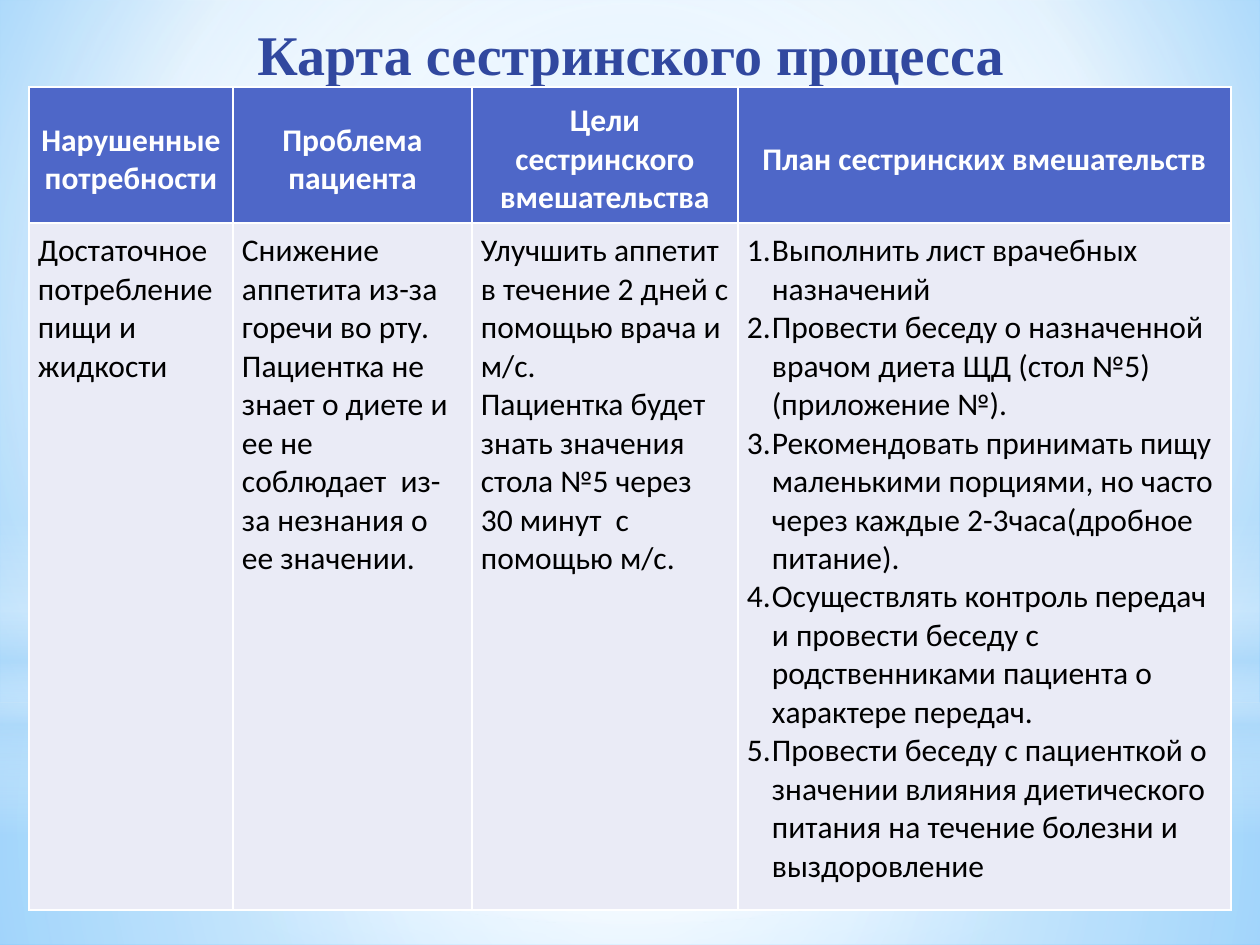
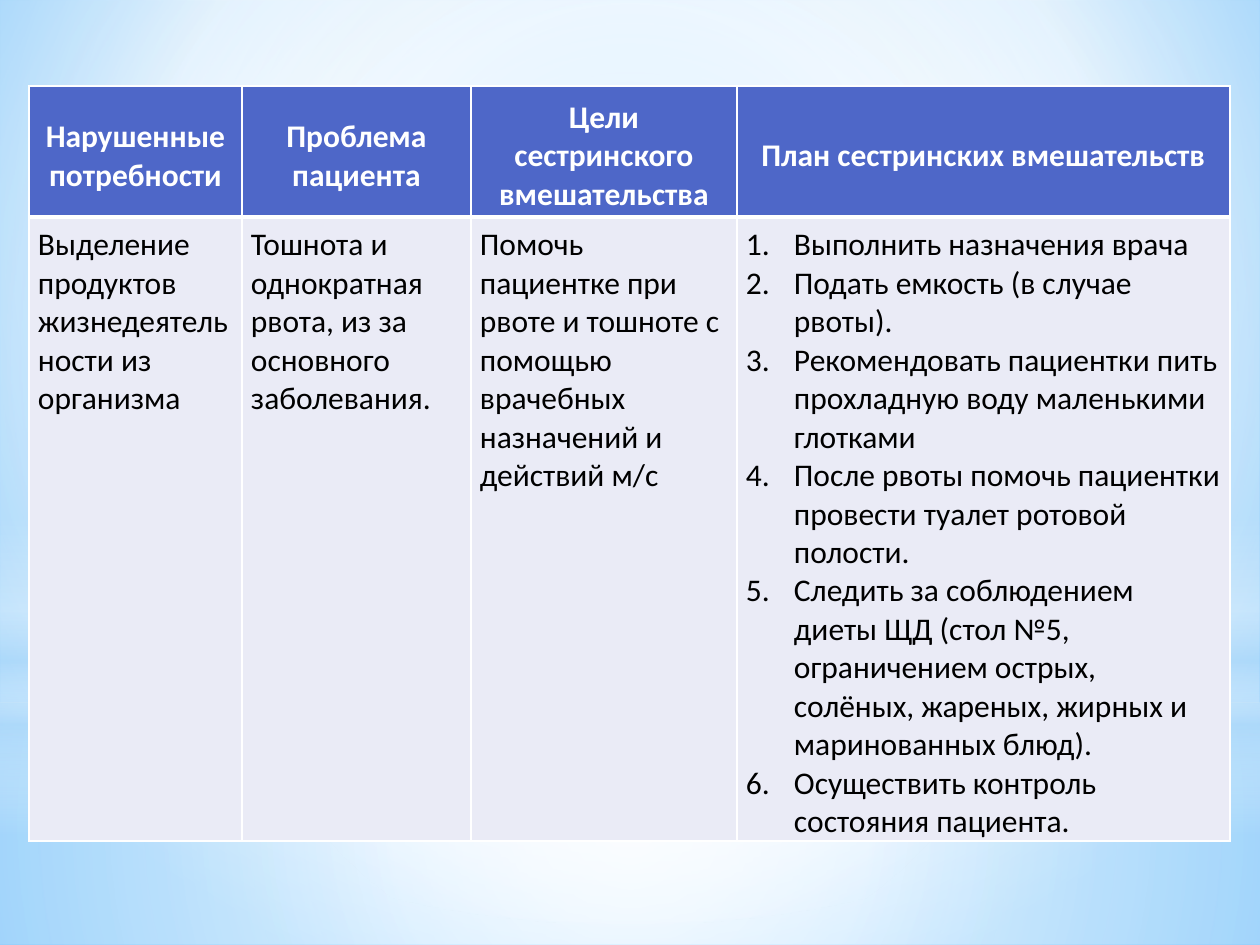
from lxml import etree
from pptx import Presentation
from pptx.dml.color import RGBColor
from pptx.enum.shapes import MSO_SHAPE
from pptx.enum.text import MSO_ANCHOR, MSO_AUTO_SIZE, PP_ALIGN
from pptx.oxml.ns import qn
from pptx.util import Pt

RECT, OVAL = MSO_SHAPE.RECTANGLE, MSO_SHAPE.OVAL
TOP, MIDDLE = MSO_ANCHOR.TOP, MSO_ANCHOR.MIDDLE
LEFT, CENTER = PP_ALIGN.LEFT, PP_ALIGN.CENTER
NO_FIT = MSO_AUTO_SIZE.NONE

EMU_PER_PX = 914400 / 126
SLIDE_W, SLIDE_H = 1260, 945
TITLE_ONLY, BLANK = 5, 6

COLORS = {
    "white": "FFFFFF", "black": "000000", "mist": "B4DCFA",
    "sky": "9ED5FF", "azure": "5BB9FF",
    "title": "31489F", "header": "4E67C8", "body": "EAEBF6",
}

TITLE_FONT = {"name": "Times New Roman", "size": Pt(32), "bold": True}
HEADER_FONT = {"name": "Calibri", "size": Pt(18), "bold": True}
BODY_FONT = {"name": "Calibri", "size": Pt(18), "bold": False}

CENTERED = (50, 50, 50, 50)
BACKGROUND_STOPS = [(0, "sky", 100), (60, "white", 100), (100, "azure", 100)]
BANDS = [
    (RECT, (0, 703, 1260, 242),
     [(0, "white", 91), (37, "white", 76), (100, "mist", 79)], CENTERED),
    (RECT, (0, 0, 1260, 703),
     [(0, "white", 89), (48, "white", 62), (100, "mist", 79)], CENTERED),
    (RECT, (0, 519, 1260, 315),
     [(0, "white", 0), (29, "white", 30), (45, "mist", 40),
      (55, "white", 26), (65, "mist", 60), (100, "white", 0)], None),
    (OVAL, (0, 221, 1260, 703),
     [(0, "white", 100), (56, "white", 0)], CENTERED),
]

HEADERS = ["Нарушенные потребности", "Проблема пациента",
           "Цели сестринского вмешательства", "План сестринских вмешательств"]

NUTRITION = {
    "top": 87, "cols": [204, 239, 266, 493], "rows": [136, 687],
    "rule": 1, "indent": 25,
    "cells": [
        ["Достаточное потребление пищи и жидкости"],
        ["Снижение аппетита из-за горечи во рту.",
         "Пациентка не знает о диете и ее не соблюдает  из-за незнания "
         "о ее значении."],
        ["Улучшить аппетит в течение 2 дней с помощью врача и м/с.",
         "Пациентка будет знать значения стола №5 через 30 минут  с помощью м/с."],
        ["Выполнить лист врачебных назначений",
         "Провести беседу о назначенной врачом диета ЩД (стол №5) (приложение №).",
         "Рекомендовать принимать пищу маленькими порциями, но часто через "
         "каждые 2-3часа(дробное питание).",
         "Осуществлять контроль передач и провести беседу с родственниками "
         "пациента о характере передач.",
         "Провести беседу с пациенткой о значении влияния диетического питания "
         "на течение болезни и выздоровление"],
    ],
}

EXCRETION = {
    "top": 86, "cols": [213, 229, 266, 493], "rows": [131, 604],
    "rule": 3, "indent": 48,
    "cells": [
        ["Выделение продуктов жизнедеятельности из организма"],
        ["Тошнота и однократная рвота, из за основного заболевания."],
        ["Помочь пациентке при рвоте и тошноте с помощью врачебных назначений "
         "и действий м/с"],
        ["Выполнить назначения врача",
         "Подать емкость (в случае рвоты).",
         "Рекомендовать пациентки пить прохладную воду маленькими глотками",
         "После рвоты помочь пациентки провести туалет ротовой полости.",
         "Следить за соблюдением диеты ЩД (стол №5, ограничением острых, "
         "солёных, жареных, жирных и маринованных блюд).",
         "Осуществить контроль состояния пациента."],
    ],
}


def px(n):
    return round(n * EMU_PER_PX)


def rgb(name):
    return RGBColor.from_string(COLORS[name])


def apply(target, values):
    for name, value in values.items():
        setattr(target, name, value)


def sub(parent, tag, **attrs):
    el = etree.SubElement(parent, qn(tag))
    for name, value in attrs.items():
        el.set(name, str(value))
    return el


def set_gradient(fill, owner, stops, focus=None):
    fill.gradient()
    grad = next(owner.iter(qn("a:gradFill")))
    for child in list(grad):
        grad.remove(child)
    stop_list = sub(grad, "a:gsLst")
    for pos, color, alpha in stops:
        stop = sub(stop_list, "a:gs", pos=pos * 1000)
        clr = sub(stop, "a:srgbClr", val=COLORS[color])
        if alpha < 100:
            sub(clr, "a:alpha", val=alpha * 1000)
    if focus:
        way = sub(grad, "a:path", path="circle")
        sub(way, "a:fillToRect", **{k: v * 1000 for k, v in zip("ltrb", focus)})
    else:
        sub(grad, "a:lin", ang=90 * 60000, scaled=0)


def add_backdrop(prs, slide):
    master = prs.slide_master
    set_gradient(master.background.fill, master.element,
                 BACKGROUND_STOPS, (20, 10, 20, 60))
    for i, (kind, box, stops, focus) in enumerate(BANDS):
        sp = slide.shapes.add_shape(kind, *map(px, box))
        sp.name = f"Band {i + 1}"
        sp.shadow.inherit = False
        sp.line.fill.background()
        set_gradient(sp.fill, sp.element, stops, focus)
        master.shapes.element.insert(2 + i, sp.element)


def add_text(p, text, font, color, align):
    p.alignment = align
    r = p.add_run()
    r.text = text
    apply(r.font, font)
    r.font.color.rgb = rgb(color)


def set_title(slide, text):
    sp = slide.shapes.title
    apply(sp, {"left": px(64), "top": px(6), "width": px(1134), "height": px(58)})
    tf = sp.text_frame
    apply(tf, {"auto_size": NO_FIT, "word_wrap": True, "vertical_anchor": TOP,
               "margin_top": px(14), "margin_bottom": 0})
    add_text(tf.paragraphs[0], text, TITLE_FONT, "title", CENTER)


def number(p, indent):
    pPr = p._p.get_or_add_pPr()
    pPr.set("marL", str(px(indent)))
    pPr.set("indent", str(-px(indent)))
    sub(pPr, "a:buFont", typeface="+mj-lt")
    sub(pPr, "a:buAutoNum", type="arabicPeriod")


def set_borders(cell, top, bottom):
    tcPr = cell._tc.get_or_add_tcPr()
    for side, width in zip("LRTB", (1, 1, top, bottom)):
        ln = sub(tcPr, f"a:ln{side}", w=Pt(width))
        sub(sub(ln, "a:solidFill"), "a:srgbClr", val=COLORS["white"])


def fill_cell(cell, lines, font, color, fill, align, anchor, borders, indent=None):
    set_borders(cell, *borders)
    cell.fill.solid()
    cell.fill.fore_color.rgb = rgb(fill)
    apply(cell, {"margin_left": px(9), "margin_top": px(9), "margin_right": px(9),
                 "margin_bottom": 0, "vertical_anchor": anchor})
    tf = cell.text_frame
    for i, line in enumerate(lines):
        p = tf.add_paragraph() if i else tf.paragraphs[0]
        add_text(p, line, font, color, align)
        if indent:
            number(p, indent)


def add_care_table(slide, plan):
    cols, rows, rule = plan["cols"], plan["rows"], plan["rule"]
    table = slide.shapes.add_table(
        len(rows), len(cols), px(29), px(plan["top"]),
        px(sum(cols)), px(sum(rows))).table
    table.horz_banding = False
    for col, width in zip(table.columns, cols):
        col.width = px(width)
    for row, height in zip(table.rows, rows):
        row.height = px(height)
    last = len(cols) - 1
    for c, (header, lines) in enumerate(zip(HEADERS, plan["cells"])):
        fill_cell(table.cell(0, c), [header], HEADER_FONT, "white", "header",
                  CENTER, MIDDLE, (1, rule))
        fill_cell(table.cell(1, c), lines, BODY_FONT, "black", "body",
                  LEFT, TOP, (rule, 1), plan["indent"] if c == last else None)


def main():
    prs = Presentation()
    prs.slide_width, prs.slide_height = px(SLIDE_W), px(SLIDE_H)

    slide = prs.slides.add_slide(prs.slide_layouts[TITLE_ONLY])
    add_backdrop(prs, slide)
    set_title(slide, "Карта сестринского процесса")
    add_care_table(slide, NUTRITION)

    slide = prs.slides.add_slide(prs.slide_layouts[BLANK])
    add_care_table(slide, EXCRETION)

    prs.save("out.pptx")


if __name__ == "__main__":
    main()
